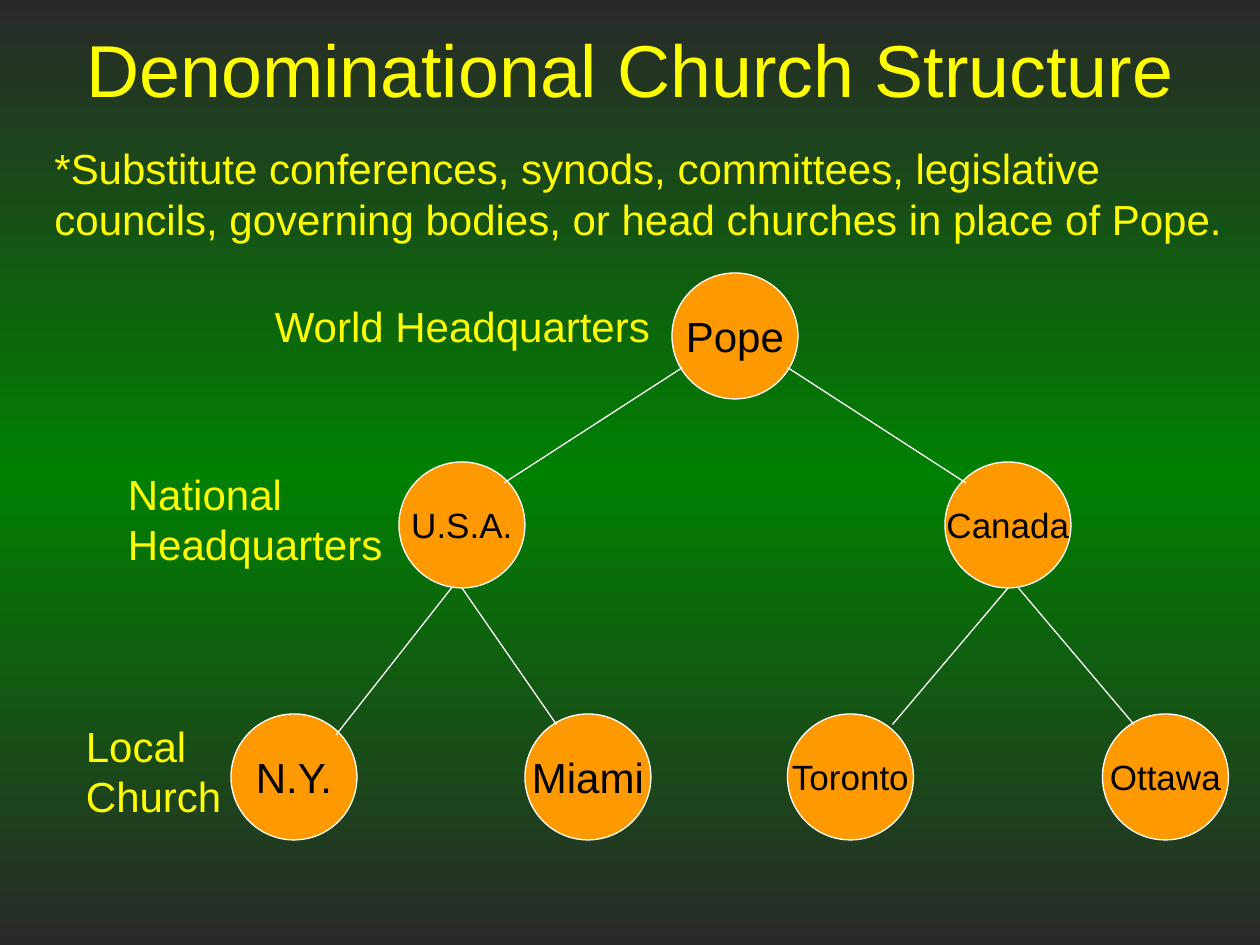
from copy import deepcopy
from pptx import Presentation
from pptx.dml.color import RGBColor
from pptx.enum.shapes import MSO_CONNECTOR as Link, MSO_SHAPE as Form
from pptx.enum.text import MSO_ANCHOR as Anchor, PP_ALIGN as Align
from pptx.oxml.ns import qn
from pptx.oxml.xmlchemy import OxmlElement
from pptx.util import Inches, Pt

HUES = {"edge": "292929", "mid": "008000", "text": "FFFF00",
        "disc": "FF9900", "name": "000000", "line": "FFFFFF"}
COLS, ROWS = 120, 90

deck = Presentation()
deck.slide_width, deck.slide_height = Inches(10), Inches(7.5)
slide = deck.slides.add_slide(deck.slide_layouts[6])
shapes = slide.shapes


def grid(x, y, *size):
    wide, high = deck.slide_width / COLS, deck.slide_height / ROWS
    return [round(n * step) for n, step in zip((x, y, *size), (wide, high) * 2)]


def write(shape, text, size, hue, align, anchor, wrap):
    frame = shape.text_frame
    frame.word_wrap = wrap
    frame.vertical_anchor = anchor
    para = frame.paragraphs[0]
    para.text = text
    para.alignment = align
    para.font.name = "Arial"
    para.font.size = Pt(size)
    para.font.color.rgb = RGBColor.from_string(HUES[hue])


fill = slide.background.fill
fill.gradient()
fill.gradient_angle = 270
stops = slide.element.find(".//" + qn("a:gsLst"))
stops.append(deepcopy(stops[0]))
for stop, spot, hue in zip(fill.gradient_stops, (0, 0.5, 1), ("edge", "mid", "edge")):
    stop.position = spot
    stop.color.rgb = RGBColor.from_string(HUES[hue])

title = shapes.add_textbox(*grid(3, 0, 114, 13))
write(title, "Denominational Church Structure", 42, "text", Align.CENTER, Anchor.MIDDLE, True)

discs = [
    ("Pope", 64, 26, 24),
    ("U.S.A.", 38, 44, 20), ("Canada", 90, 44, 20),
    ("N.Y.", 22, 68, 24), ("Miami", 50, 68, 24),
    ("Toronto", 75, 68, 20), ("Ottawa", 105, 68, 20),
]
for name, x, y, size in discs:
    disc = shapes.add_shape(Form.OVAL, *grid(x, y, 12, 12))
    disc.shadow.inherit = False
    disc.fill.solid()
    disc.fill.fore_color.rgb = RGBColor.from_string(HUES["disc"])
    disc.line.color.rgb = RGBColor.from_string(HUES["line"])
    disc.line.width = Pt(0.75)
    write(disc, name, size, "name", Align.CENTER, Anchor.MIDDLE, False)

labels = [
    ("World Headquarters", 25, 28, 38.25, 6, False),
    ("National Headquarters", 11, 44, 34, 10.8, True),
    ("Local Church", 7, 68, 21, 10.8, True),
    ("*Substitute conferences, synods, committees, legislative councils, "
     "governing bodies, or head churches in place of Pope.", 4, 13, 116, 10.8, True),
]
for text, x, y, wide, high, wrap in labels:
    label = shapes.add_textbox(*grid(x, y, wide, high))
    write(label, text, 24, "text", Align.LEFT, Anchor.TOP, wrap)

links = [
    ((65, 35), (48, 46)), ((75, 35), (92, 46)),
    ((43, 56), (32, 70)), ((44, 56), (53, 69)),
    ((96, 56), (85, 69)), ((97, 56), (108, 69)),
]
for start, end in links:
    link = shapes.add_connector(Link.STRAIGHT, *grid(*start), *grid(*end))
    link.line.color.rgb = RGBColor.from_string(HUES["line"])
    link.line.width = Pt(0.75)
    link.element.spPr.append(OxmlElement("a:effectLst"))

deck.save("out.pptx")
